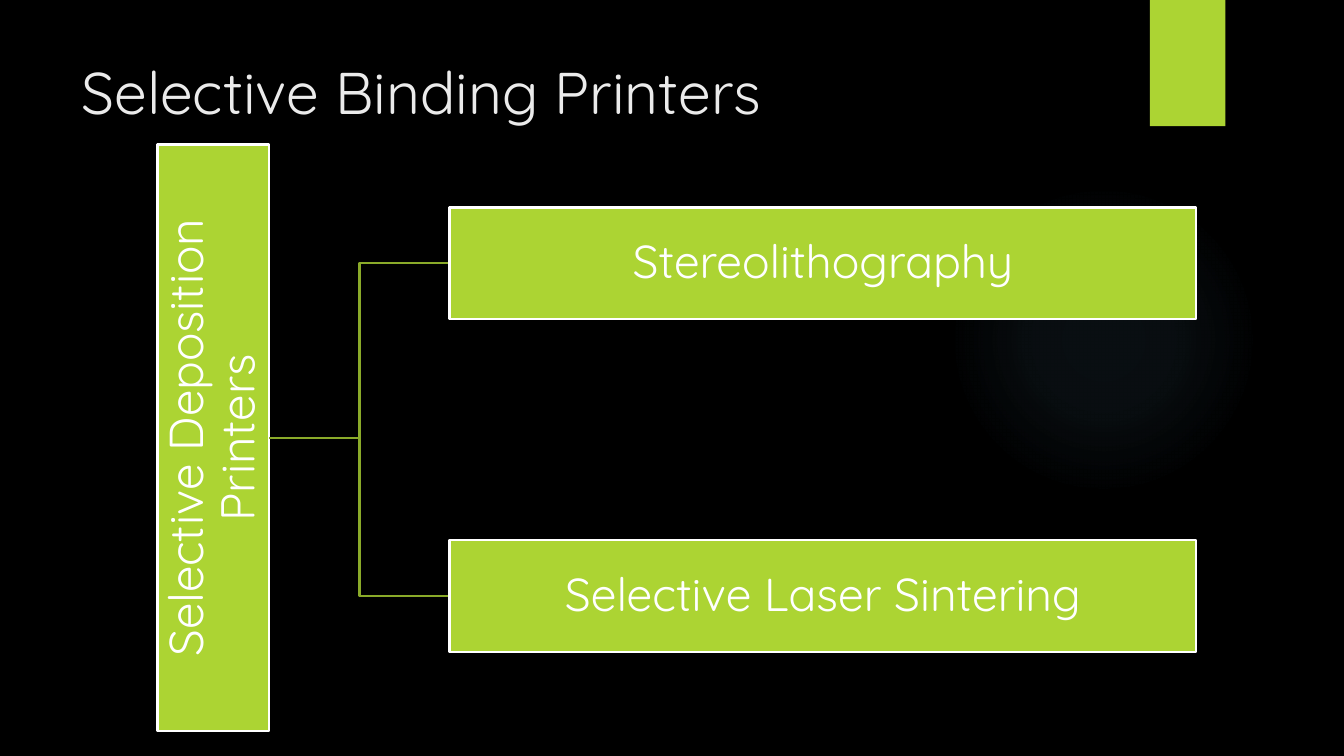
from pptx import Presentation
from pptx.dml.color import RGBColor
from pptx.enum import shapes, text
from pptx.oxml import parse_xml
from pptx.oxml.ns import nsdecls, qn
from pptx.util import Cm, Pt

INK = {"back": "000000", "lime": "ACD433", "olive": "8AAA29",
       "white": "FFFFFF", "title": "EBEBEB", "glow": "7AC4F0"}
FONT = "Quicksand"


def style(para, size, ink):
    font = para.runs[0].font
    font.name = FONT
    font.size = Pt(size)
    font.bold = False
    font.color.rgb = RGBColor.from_string(INK[ink])


def block(kind, left, top, width, height):
    shape = slide.shapes.add_shape(kind, Cm(left), Cm(top), Cm(width), Cm(height))
    shape.shadow.inherit = False
    shape.fill.solid()
    shape.fill.fore_color.rgb = RGBColor.from_string(INK["lime"])
    shape.line.fill.background()
    return shape


deck = Presentation()
deck.slide_width = Cm(33.87)
deck.slide_height = Cm(19.05)
slide = deck.slides.add_slide(deck.slide_layouts[5])
slide.background.fill.solid()
slide.background.fill.fore_color.rgb = RGBColor.from_string(INK["back"])

glow = block(shapes.MSO_SHAPE.OVAL, 23.9, 4.65, 7.82, 7.82)
stops = "".join(
    f'<a:gs pos="{pos}000"><a:srgbClr val="{INK["glow"]}">'
    f'<a:alpha val="{alpha}000"/></a:srgbClr></a:gs>'
    for pos, alpha in [(0, 7), (36, 6), (69, 0)])
fade = parse_xml(
    f'<a:gradFill {nsdecls("a")}><a:gsLst>{stops}</a:gsLst><a:path path="circle">'
    '<a:fillToRect l="50000" t="50000" r="50000" b="50000"/></a:path></a:gradFill>')
props = glow.element.spPr
props.replace(props.find(qn("a:solidFill")), fade)

block(shapes.MSO_SHAPE.RECTANGLE, 28.98, 0, 1.9, 3.18)

title = slide.shapes.title
title.left, title.top, title.width, title.height = Cm(1.8), Cm(1.27), Cm(26.14), Cm(3.89)
frame = title.text_frame
frame.text = "Selective Binding Printers"
frame.vertical_anchor = text.MSO_ANCHOR.TOP
frame.paragraphs[0].alignment = text.PP_ALIGN.LEFT
style(frame.paragraphs[0], 42, "title")

HIGH = 2.82
LONG = 14.78
MID_X, MID_Y = 5.38, 11.03
LEFT, WIDE = 11.33, 18.82

nodes = [
    ("Selective Deposition Printers", 34, MID_X - LONG / 2, MID_Y - HIGH / 2, LONG, 270),
    ("Stereolithography", 33, LEFT, 5.23, WIDE, 0),
    ("Selective Laser Sintering", 33, LEFT, 13.61, WIDE, 0),
]

for label, size, left, top, width, turn in nodes:
    if not turn:
        link = slide.shapes.add_connector(
            shapes.MSO_CONNECTOR.ELBOW,
            Cm(MID_X + HIGH / 2), Cm(MID_Y), Cm(LEFT), Cm(top + HIGH / 2))
        link.line.color.rgb = RGBColor.from_string(INK["olive"])
        link.line.width = Pt(1.5)
        link.element.spPr.append(parse_xml(f'<a:effectLst {nsdecls("a")}/>'))
    node = block(shapes.MSO_SHAPE.RECTANGLE, left, top, width, HIGH)
    node.rotation = turn
    node.line.color.rgb = RGBColor.from_string(INK["white"])
    node.line.width = Pt(1.5)
    frame = node.text_frame
    frame.text = label
    frame.word_wrap = True
    frame.vertical_anchor = text.MSO_ANCHOR.MIDDLE
    frame.margin_left = frame.margin_right = Cm(0.05)
    frame.margin_top = frame.margin_bottom = Cm(0.05)
    para = frame.paragraphs[0]
    para.alignment = text.PP_ALIGN.CENTER
    para.line_spacing = 0.9
    style(para, size, "white")

deck.save("out.pptx")
